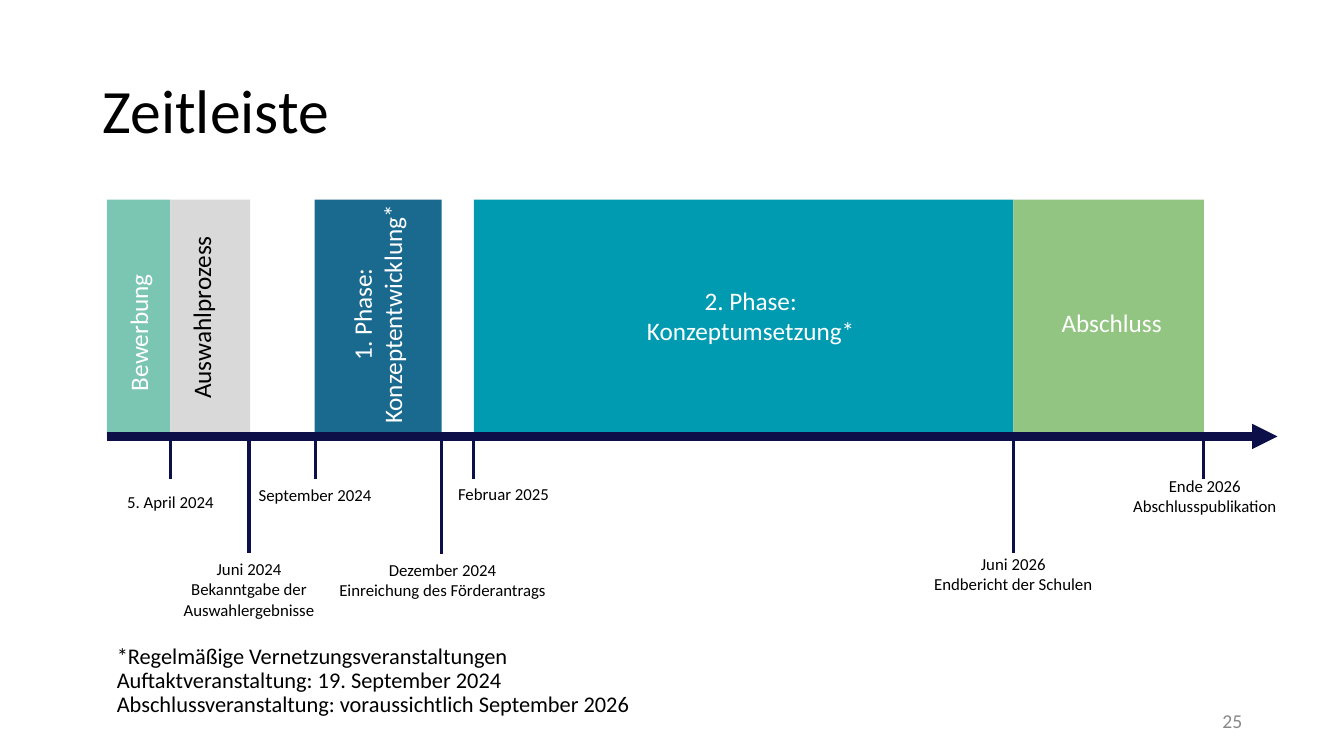
from dataclasses import dataclass

from lxml.etree import SubElement
from pptx import Presentation
from pptx.dml.color import RGBColor
from pptx.enum.shapes import MSO_CONNECTOR as Connector, MSO_SHAPE as Preset
from pptx.enum.text import MSO_ANCHOR as Anchor, PP_ALIGN as Align
from pptx.oxml.ns import qn
from pptx.util import Pt

PX = 9144  # 100 px to the inch
FONT = "Calibri"
COLORS = {
    "black": "000000", "white": "FFFFFF", "gray": "888888", "navy": "0D0F49",
    "mint": "7BC5B3", "silver": "D9D9D9", "blue": "1A698F", "teal": "009AB1",
    "green": "92C581",
}
BAR_TOP, BAR_HEIGHT = 198, 236
AXIS_Y, AXIS_START, AXIS_END = 433, 106, 1267


@dataclass(frozen=True)
class Box:
    left: int
    top: int
    width: int
    height: int

    def emu(self) -> list[int]:
        return [v * PX for v in (self.left, self.top, self.width, self.height)]


@dataclass(frozen=True)
class Phase:
    left: int
    right: int
    fill: str
    text: str
    text_box: Box
    rotation: int = 0
    color: str = "white"


@dataclass(frozen=True)
class Milestone:
    x: int
    tick_end: int
    text: str
    label_box: Box


PHASES = [
    Phase(106, 169, "mint", "Bewerbung", Box(47, 302, 180, 56), 270),
    Phase(169, 248, "silver", "Auswahlprozess", Box(103, 287, 193, 56), 270, "black"),
    Phase(312, 438, "blue", "1. Phase:\vKonzeptentwicklung*", Box(254, 284, 240, 56), 270),
    Phase(470, 1005, "teal", "2. Phase:\vKonzeptumsetzung*", Box(627, 285, 235, 56)),
    Phase(1005, 1194, "green", "Abschluss", Box(998, 292, 209, 56)),
]
MILESTONES = [
    Milestone(169, 475, "5. April 2024", Box(113, 481, 112, 34)),
    Milestone(247, 549, "Juni 2024\nBekanntgabe der Auswahlergebnisse", Box(164, 549, 166, 71)),
    Milestone(313, 475, "September 2024", Box(242, 474, 141, 34)),
    Milestone(438, 550, "Dezember 2024\nEinreichung des Förderantrags", Box(309, 555, 260, 40)),
    Milestone(470, 475, "Februar 2025", Box(438, 474, 123, 31)),
    Milestone(1005, 549, "Juni 2026\nEndbericht der Schulen", Box(908, 549, 194, 40)),
    Milestone(1194, 475, "Ende 2026\nAbschlusspublikation", Box(1102, 472, 186, 40)),
]


def rgb(name: str) -> RGBColor:
    return RGBColor.from_string(COLORS[name])


def add_text(slide, box: Box, text: str, size: int, color: str = "black",
             align=Align.CENTER, anchor=Anchor.MIDDLE, inset: int = 10,
             spacing: float = 1.0, rotation: int = 0):
    shape = slide.shapes.add_textbox(*box.emu())
    shape.rotation = rotation
    frame = shape.text_frame
    frame_format = {
        "word_wrap": True, "vertical_anchor": anchor,
        "margin_left": 10 * PX, "margin_right": 10 * PX,
        "margin_top": inset * PX, "margin_bottom": inset * PX, "text": text,
    }
    for key, value in frame_format.items():
        setattr(frame, key, value)
    for paragraph in frame.paragraphs:
        paragraph.alignment = align
        paragraph.line_spacing = spacing
        for run in paragraph.runs:
            for key, value in {"name": FONT, "size": Pt(size)}.items():
                setattr(run.font, key, value)
            run.font.color.rgb = rgb(color)
    return shape


def add_line(slide, x1: int, y1: int, x2: int, y2: int, weight: float):
    line = slide.shapes.add_connector(
        Connector.STRAIGHT, x1 * PX, y1 * PX, x2 * PX, y2 * PX)
    line.line.color.rgb = rgb("navy")
    line.line.width = Pt(weight)
    SubElement(line._element.spPr, qn("a:effectLst"))
    return line


def add_phase(slide, phase: Phase) -> None:
    bar_box = Box(phase.left, BAR_TOP, phase.right - phase.left, BAR_HEIGHT)
    bar = slide.shapes.add_shape(Preset.RECTANGLE, *bar_box.emu())
    bar.shadow.inherit = False
    bar.fill.solid()
    bar.fill.fore_color.rgb = rgb(phase.fill)
    bar.line.fill.background()
    add_text(slide, phase.text_box, phase.text, 18, phase.color,
             rotation=phase.rotation)


def add_axis(slide) -> None:
    axis = add_line(slide, AXIS_START, AXIS_Y, AXIS_END, AXIS_Y, 6)
    SubElement(axis.line._get_or_add_ln(), qn("a:tailEnd"), type="triangle")


def add_milestone(slide, milestone: Milestone) -> None:
    box = milestone.label_box
    label = add_text(slide, box, milestone.text, 12)
    tick = add_line(slide, milestone.x, AXIS_Y, milestone.x, milestone.tick_end, 2.25)
    if (milestone.x, milestone.tick_end) == (box.left + box.width // 2, box.top):
        tick.end_connect(label, 0)


def main() -> None:
    deck = Presentation()
    deck.slide_width, deck.slide_height = 1333 * PX, 750 * PX
    slide = deck.slides.add_slide(deck.slide_layouts[6])

    add_text(slide, Box(92, 40, 1150, 145), "Zeitleiste", 44,
             align=Align.LEFT, inset=5, spacing=0.9)
    for phase in PHASES:
        add_phase(slide, phase)
    add_axis(slide)
    for milestone in MILESTONES:
        add_milestone(slide, milestone)
    add_text(slide, Box(106, 635, 722, 88),
             "*Regelmäßige Vernetzungsveranstaltungen\v"
             "Auftaktveranstaltung: 19. September 2024\n"
             "Abschlussveranstaltung: voraussichtlich September 2026",
             16, align=Align.LEFT, anchor=Anchor.TOP, inset=5, spacing=0.9)
    add_text(slide, Box(942, 695, 300, 40), "25", 14, "gray",
             align=Align.RIGHT, inset=5)
    deck.save("out.pptx")


if __name__ == "__main__":
    main()
